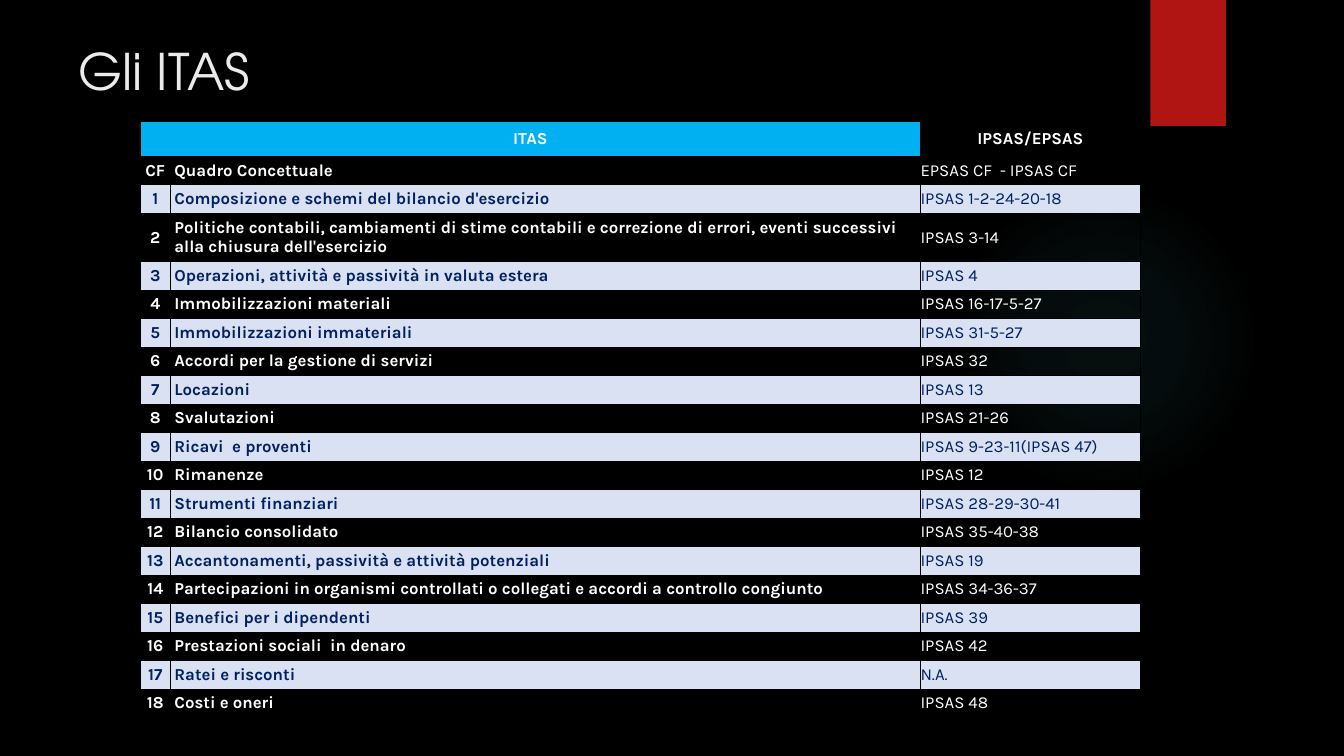
import pptx
import pptx.util
import pptx.dml.color
import pptx.enum.shapes
import pptx.enum.text
import pptx.oxml
import pptx.oxml.ns

Inches, Pt = pptx.util.Inches, pptx.util.Pt
ALIGN = pptx.enum.text.PP_ALIGN
ANCHOR = pptx.enum.text.MSO_ANCHOR
SHAPE = pptx.enum.shapes.MSO_SHAPE
NS = pptx.oxml.ns.nsdecls("a")

STANDARDS = [
    ("CF", "Quadro Concettuale", "EPSAS CF  - IPSAS CF"),
    ("1", "Composizione e schemi del bilancio d'esercizio", "IPSAS 1-2-24-20-18"),
    ("2", "Politiche contabili, cambiamenti di stime contabili e correzione di errori, "
          "eventi successivi alla chiusura dell'esercizio", "IPSAS 3-14"),
    ("3", "Operazioni, attività e passività in valuta estera", "IPSAS 4"),
    ("4", "Immobilizzazioni materiali", "IPSAS 16-17-5-27"),
    ("5", "Immobilizzazioni immateriali", "IPSAS 31-5-27"),
    ("6", "Accordi per la gestione di servizi", "IPSAS 32"),
    ("7", "Locazioni", "IPSAS 13"),
    ("8", "Svalutazioni", "IPSAS 21-26"),
    ("9", "Ricavi  e proventi", "IPSAS 9-23-11(IPSAS 47)"),
    ("10", "Rimanenze", "IPSAS 12"),
    ("11", "Strumenti finanziari", "IPSAS 28-29-30-41"),
    ("12", "Bilancio consolidato", "IPSAS 35-40-38"),
    ("13", "Accantonamenti, passività e attività potenziali", "IPSAS 19"),
    ("14", "Partecipazioni in organismi controllati o collegati e accordi a controllo congiunto",
     "IPSAS 34-36-37"),
    ("15", "Benefici per i dipendenti", "IPSAS 39"),
    ("16", "Prestazioni sociali  in denaro", "IPSAS 42"),
    ("17", "Ratei e risconti", "N.A."),
    ("18", "Costi e oneri", "IPSAS 48"),
]


def color(hex_code):
    return pptx.dml.color.RGBColor.from_string(hex_code)


def set_cell(cell, text, fill=None, font_color="FFFFFF", bold=True, align=ALIGN.LEFT, inset=0):
    cell.text = text
    cell.vertical_anchor = ANCHOR.MIDDLE
    cell.margin_left = cell.margin_right = Inches(inset)
    cell.margin_top = cell.margin_bottom = Inches(inset)
    p = cell.text_frame.paragraphs[0]
    p.alignment = align
    p.font.name, p.font.size, p.font.bold = "Karla", Pt(12), bold
    p.font.color.rgb = color(font_color)
    # Thin black borders come before the fill in the cell properties
    tcPr = cell._tc.get_or_add_tcPr()
    for side in ("lnL", "lnR", "lnT", "lnB"):
        tcPr.append(pptx.oxml.parse_xml(
            f'<a:{side} {NS} w="6350"><a:solidFill><a:srgbClr val="000000"/></a:solidFill></a:{side}>'))
    if fill:
        cell.fill.solid()
        cell.fill.fore_color.rgb = color(fill)
    else:
        cell.fill.background()


prs = pptx.Presentation()
prs.slide_width, prs.slide_height = Inches(13.33), Inches(7.5)
s = prs.slides.add_slide(prs.slide_layouts[5])
s.background.fill.solid()
s.background.fill.fore_color.rgb = color("000000")

# Soft glow
glow = s.shapes.add_shape(SHAPE.OVAL, Inches(9.41), Inches(1.83), Inches(3.08), Inches(3.08))
glow.shadow.inherit = False
glow.line.fill.background()
stops = "".join(
    f'<a:gs pos="{pos * 1000}"><a:srgbClr val="50B9C1"><a:alpha val="{alpha * 1000}"/></a:srgbClr></a:gs>'
    for pos, alpha in ((0, 7), (36, 6), (69, 0), (100, 0)))
glow._element.spPr.find(pptx.oxml.ns.qn("a:prstGeom")).addnext(pptx.oxml.parse_xml(
    f'<a:gradFill {NS}><a:gsLst>{stops}</a:gsLst><a:path path="circle">'
    '<a:fillToRect l="50000" t="50000" r="50000" b="50000"/></a:path></a:gradFill>'))

# Red ribbon
ribbon = s.shapes.add_shape(SHAPE.RECTANGLE, Inches(11.41), 0, Inches(0.75), Inches(1.25))
ribbon.shadow.inherit = False
ribbon.fill.solid()
ribbon.fill.fore_color.rgb = color("B01513")
ribbon.line.fill.background()

# Title
title = s.shapes.title
title.left, title.top, title.width, title.height = (Inches(v) for v in (0.68, 0.35, 10.29, 1.53))
tf = title.text_frame
tf.text = "Gli ITAS"
tf.vertical_anchor = ANCHOR.TOP
p = tf.paragraphs[0]
p.alignment = ALIGN.LEFT
p.font.name, p.font.size = "TeX Gyre Adventor", Pt(36)
p.font.color.rgb = color("EBEBEB")

# Table grid: a header, one two-line row, and equal rows in the rest of the height
table_height, header_height, tall_height = 5.92, 0.35, 0.48
row_height = (table_height - header_height - tall_height) / (len(STANDARDS) - 1)
table = s.shapes.add_table(len(STANDARDS) + 1, 3, Inches(1.39), Inches(1.2),
                           Inches(9.92), Inches(table_height)).table
table.first_row = table.horz_banding = False
for column, width in zip(table.columns, (0.3, 7.44, 2.18)):
    column.width = Inches(width)
for row in table.rows:
    row.height = Inches(row_height)
table.rows[0].height = Inches(header_height)
table.rows[3].height = Inches(tall_height)

# Header
set_cell(table.cell(0, 0), "ITAS", fill="00B0F0", align=ALIGN.CENTER)
set_cell(table.cell(0, 2), "IPSAS/EPSAS", align=ALIGN.CENTER)
table.cell(0, 0).merge(table.cell(0, 1))

# Standards, every second row light
for i, (number, name, reference) in enumerate(STANDARDS):
    fill, font_color = ("D9E1F2", "002060") if i % 2 else (None, "FFFFFF")
    set_cell(table.cell(i + 1, 0), number, fill, font_color, align=ALIGN.CENTER)
    set_cell(table.cell(i + 1, 1), name, fill, font_color, inset=0.04)
    set_cell(table.cell(i + 1, 2), reference, fill, font_color, bold=False)

prs.save("out.pptx")
